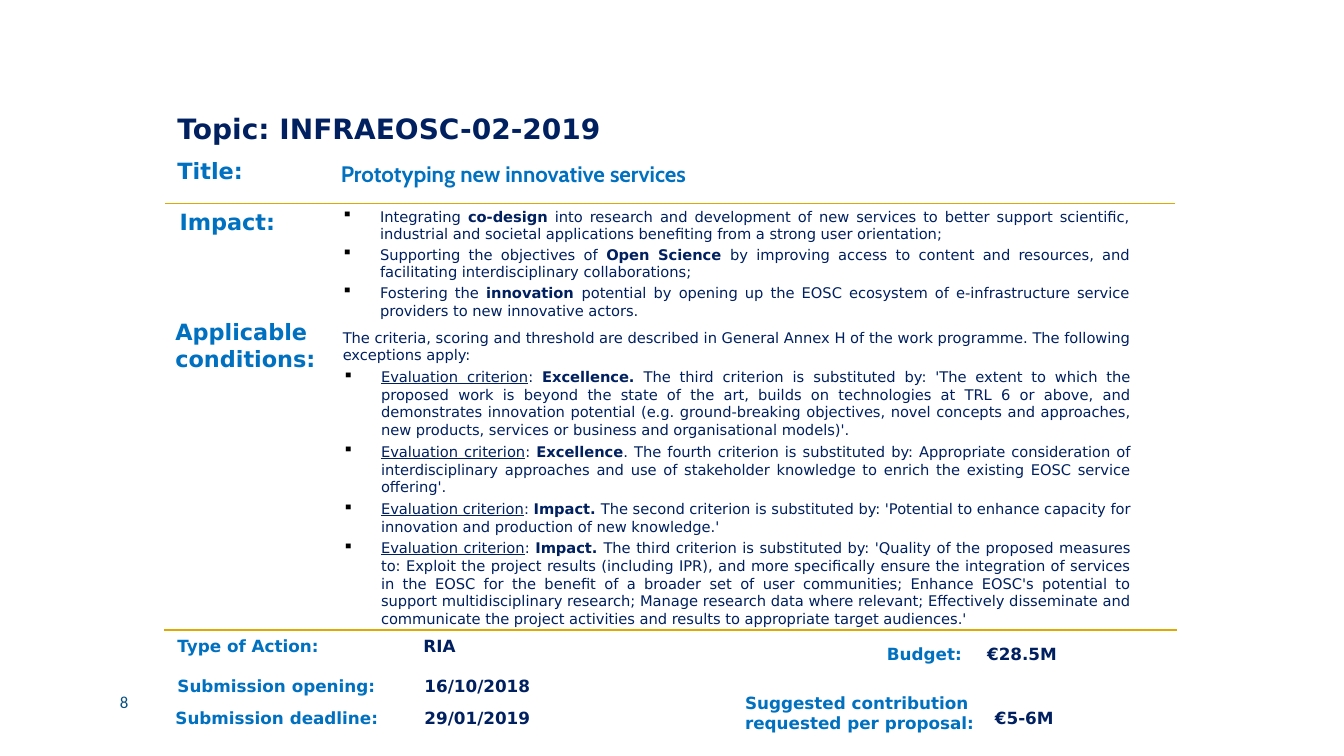
"""Build the slide on topic INFRAEOSC-02-2019."""
from lxml import etree
from pptx import Presentation
from pptx.dml.color import RGBColor
from pptx.enum.shapes import MSO_CONNECTOR
from pptx.enum.text import PP_ALIGN
from pptx.oxml.ns import qn
from pptx.util import Pt

PX = 9144
LEFT, MID, RIGHT, FULL = PP_ALIGN.LEFT, PP_ALIGN.CENTER, PP_ALIGN.RIGHT, PP_ALIGN.JUSTIFY
STRAIGHT = MSO_CONNECTOR.STRAIGHT
SANS = "DejaVu Sans"
BLUE, NAVY, GOLD = "0070C0", "002060", "DEA900"

deck = Presentation()
deck.slide_width, deck.slide_height = 1333 * PX, 750 * PX
slide = deck.slides.add_slide(deck.slide_layouts[6])


def add_box(left, top, width, height, pad=(9, 4)):
    box = slide.shapes.add_textbox(left * PX, top * PX, width * PX, height * PX)
    frame = box.text_frame
    frame.word_wrap = True
    frame.margin_left = frame.margin_right = pad[0] * PX
    frame.margin_top = frame.margin_bottom = pad[1] * PX
    return frame


def add_para(para, runs, size, color, bold=None, font=SANS, align=LEFT, bullet=False):
    if bullet:
        props = para._p.get_or_add_pPr()
        props.set("marL", str(38 * PX))
        props.set("indent", str(-38 * PX))
        fill = etree.SubElement(props, qn("a:buClr"))
        etree.SubElement(fill, qn("a:srgbClr"), val="000000")
        etree.SubElement(props, qn("a:buChar"), char="▪")
    para.alignment = align
    para.font.size = Pt(size)
    para.font.name = font
    para.font.bold = bold
    para.font.color.rgb = RGBColor.from_string(color)
    for text, strong, under in runs:
        run = para.add_run()
        run.text = text
        if strong:
            run.font.bold = True
        if under:
            run.font.underline = True


labels = [
    ("Title:", 167, 155, 161, 47, 16, BLUE, SANS, LEFT),
    ("Applicable conditions:", 165, 312, 217, 94, 16, BLUE, SANS, LEFT),
    ("Topic: INFRAEOSC-02-2019", 167, 107, 701, 47, 20, NAVY, SANS, LEFT),
    ("Prototyping new innovative services", 329, 155, 779, 47, 16, BLUE, "Cabin", LEFT),
    ("Impact:", 169, 202, 161, 47, 16, BLUE, SANS, LEFT),
    ("Type of Action:", 167, 627, 248, 47, 12, BLUE, SANS, LEFT),
    ("Submission opening:", 167, 666, 248, 47, 12, BLUE, SANS, LEFT),
    ("Submission deadline:", 165, 698, 249, 47, 12, BLUE, SANS, LEFT),
    ("RIA", 411, 627, 193, 32, 12, NAVY, SANS, LEFT),
    ("16/10/2018", 412, 666, 193, 32, 12, NAVY, SANS, LEFT),
    ("29/01/2019", 412, 698, 193, 32, 12, NAVY, SANS, LEFT),
    ("Budget:", 813, 635, 150, 47, 12, BLUE, SANS, RIGHT),
    ("€28.5M", 970, 635, 98, 32, 12, NAVY, SANS, LEFT),
    ("Suggested contribution requested per proposal:", 730, 683, 283, 47, 12, BLUE, SANS, LEFT),
    ("€5-6M", 963, 698, 106, 31, 12, NAVY, SANS, MID),
]
for text, left, top, width, height, size, color, font, align in labels:
    para = add_box(left, top, width, height).paragraphs[0]
    add_para(para, [(text, False, False)], size, color, True, font, align)
    if text == "Title:":
        para.line_spacing = 0.9

page = add_box(109, 681, 145, 30, (10, 5)).paragraphs[0]
add_para(page, [("8", False, False)], 12, "065081", font="Calibri")

impacts = [
    ("Integrating ", "co-design", " into research and development of new services to better support "
     "scientific, industrial and societal applications benefiting from a strong user orientation;"),
    ("Supporting the objectives of ", "Open Science ", "by improving access to content and "
     "resources, and facilitating interdisciplinary collaborations;"),
    ("Fostering the ", "innovation ", "potential by opening up the EOSC ecosystem of "
     "e-infrastructure service providers to new innovative actors."),
]
frame = add_box(330, 202, 800, 110)
for num, (start, key, rest) in enumerate(impacts):
    para = frame.add_paragraph() if num else frame.paragraphs[0]
    runs = [(start, False, False), (key, True, False), (rest, False, False)]
    add_para(para, runs, 10.5, NAVY, align=FULL, bullet=True)
    para.space_after = Pt(2)

intro = ("The criteria, scoring and threshold are described in General Annex H of the work "
         "programme. The following exceptions apply:")
rules = [
    ("Excellence.", " The third criterion is substituted by: 'The extent to which the proposed work "
     "is beyond the state of the art, builds on technologies at TRL 6 or above, and demonstrates "
     "innovation potential (e.g. ground-breaking objectives, novel concepts and approaches, new "
     "products, services or business and organisational models)'."),
    ("Excellence", ". The fourth criterion is substituted by: Appropriate consideration of "
     "interdisciplinary approaches and use of stakeholder knowledge to enrich the existing EOSC "
     "service offering'."),
    ("Impact. ", "The second criterion is substituted by: 'Potential to enhance capacity for "
     "innovation and production of new knowledge.'"),
    ("Impact. ", "The third criterion is substituted by: 'Quality of the proposed measures to: "
     "Exploit the project results (including IPR), and more specifically ensure the integration of "
     "services in the EOSC for the benefit of a broader set of user communities; Enhance EOSC's "
     "potential to support multidisciplinary research; Manage research data where relevant; "
     "Effectively disseminate and communicate the project activities and results to appropriate "
     "target audiences.'"),
]
frame = add_box(331, 322, 800, 313)
add_para(frame.paragraphs[0], [(intro, False, False)], 10.5, NAVY, align=FULL)
for key, rest in rules:
    para = frame.add_paragraph()
    runs = [("Evaluation criterion", False, True), (": ", False, False),
            (key, True, False), (rest, False, False)]
    add_para(para, runs, 10.5, NAVY, align=FULL, bullet=True)
    para.space_before = Pt(3)

for left, right, top in [(164, 1165, 202), (163, 1167, 625)]:
    line = slide.shapes.add_connector(STRAIGHT, left * PX, top * PX, right * PX, top * PX)
    line.line.color.rgb = RGBColor.from_string(GOLD)
    line.line.width = Pt(0.75)
    etree.SubElement(line._element.spPr, qn("a:effectLst"))

deck.save("out.pptx")
